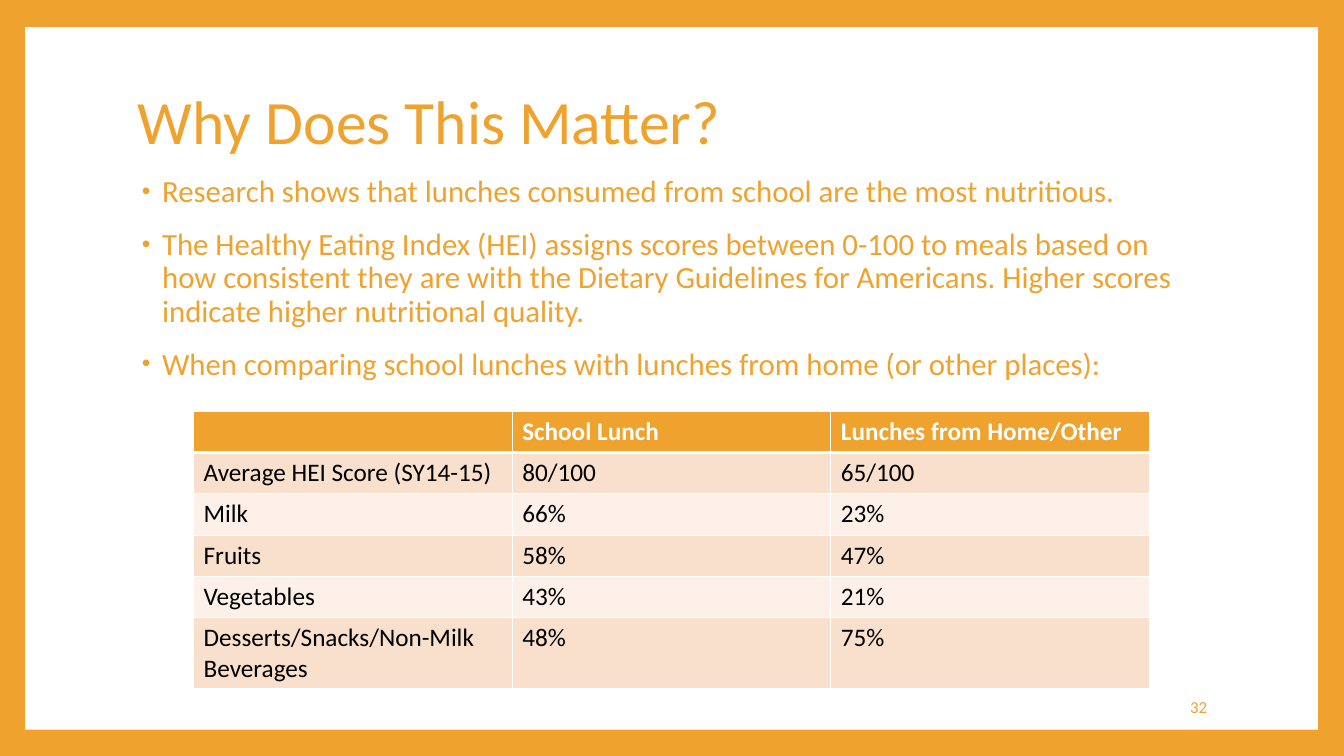
from dataclasses import dataclass

from lxml import etree
from pptx import Presentation
from pptx.dml.color import RGBColor
from pptx.enum.shapes import MSO_SHAPE
from pptx.enum.text import MSO_ANCHOR, PP_ALIGN
from pptx.oxml.ns import qn
from pptx.util import Inches, Pt

RECT = MSO_SHAPE.RECTANGLE
TOP, MIDDLE = MSO_ANCHOR.TOP, MSO_ANCHOR.MIDDLE
LEFT, RIGHT = PP_ALIGN.LEFT, PP_ALIGN.RIGHT


@dataclass(frozen=True)
class Theme:
    font: str = "Calibri"
    accent: str = "F0A22E"
    paper: str = "FFFFFF"
    ink: str = "000000"
    bands: tuple = ("F9E0CD", "FCF0E8")
    title: int = 44
    body: int = 22
    table: int = 18
    number: int = 12


THEME = Theme()

BULLETS = [
    "Research shows that lunches consumed from school are the most nutritious.",
    "The Healthy Eating Index (HEI) assigns scores between 0-100 to meals based on "
    "how consistent they are with the Dietary Guidelines for Americans. "
    "Higher scores indicate higher nutritional quality.",
    "When comparing school lunches with lunches from home (or other places):",
]
SCORES = [
    ("", "School Lunch", "Lunches from Home/Other"),
    ("Average HEI Score (SY14-15)", "80/100", "65/100"),
    ("Milk", "66%", "23%"),
    ("Fruits", "58%", "47%"),
    ("Vegetables", "43%", "21%"),
    ("Desserts/Snacks/Non-Milk Beverages", "48%", "75%"),
]


def paint(fill, color):
    fill.solid()
    fill.fore_color.rgb = RGBColor.from_string(color)


def write(p, text, size, color=THEME.accent, bold=False, align=LEFT,
          line_spacing=None, space_before=0):
    p.alignment = align
    p.line_spacing = line_spacing
    p.space_before = Pt(space_before)
    r = p.add_run()
    r.text = text
    r.font.name = THEME.font
    r.font.size = Pt(size)
    r.font.bold = bold
    r.font.color.rgb = RGBColor.from_string(color)


def add_frame(s, box, anchor=TOP):
    """Add a wrapping text box and return its text frame."""
    tf = s.shapes.add_textbox(*map(Inches, box)).text_frame
    tf.word_wrap = True
    tf.vertical_anchor = anchor
    return tf


def add_bullet(p, indent=0.25, hang=0.2):
    pPr = p._p.get_or_add_pPr()
    pPr.set("marL", str(Inches(indent)))
    pPr.set("indent", str(-Inches(hang)))
    color = etree.SubElement(pPr, qn("a:buClr"))
    etree.SubElement(color, qn("a:srgbClr"), val=THEME.accent)
    etree.SubElement(pPr, qn("a:buSzPct"), val="80000")
    etree.SubElement(pPr, qn("a:buFont"), typeface="Arial")
    etree.SubElement(pPr, qn("a:buChar"), char="•")


def add_borders(cell, **widths):
    """Draw white cell borders; widths are points keyed L, R, T, B."""
    tcPr = cell._tc.get_or_add_tcPr()
    for side, width in widths.items():
        ln = etree.SubElement(tcPr, qn(f"a:ln{side}"), w=str(Pt(width)))
        fill = etree.SubElement(ln, qn("a:solidFill"))
        etree.SubElement(fill, qn("a:srgbClr"), val=THEME.paper)


def add_background(s, box):
    paint(s.background.fill, THEME.accent)
    sp = s.shapes.add_shape(RECT, *map(Inches, box))
    sp.shadow.inherit = False
    paint(sp.fill, THEME.paper)
    sp.line.fill.background()


def add_title(s, box, text):
    tf = add_frame(s, box, MIDDLE)
    write(tf.paragraphs[0], text, THEME.title, line_spacing=0.9)


def add_bullets(s, box, items):
    tf = add_frame(s, box)
    for i, item in enumerate(items):
        p = tf.add_paragraph() if i else tf.paragraphs[0]
        write(p, item, THEME.body, line_spacing=0.9, space_before=14)
        add_bullet(p)


def add_score_table(s, box, rows):
    table = s.shapes.add_table(len(rows), len(rows[0]), *map(Inches, box)).table
    table.horz_banding = False
    for i, row in enumerate(rows):
        header = i == 0
        fill = THEME.accent if header else THEME.bands[(i - 1) % 2]
        color = THEME.paper if header else THEME.ink
        for j, text in enumerate(row):
            cell = table.cell(i, j)
            add_borders(cell, L=1, R=1, T=3 if i == 1 else 1, B=3 if header else 1)
            paint(cell.fill, fill)
            if text:
                write(cell.text_frame.paragraphs[0], text, THEME.table,
                      color=color, bold=header)


def add_slide_number(s, box, number):
    tf = add_frame(s, box)
    tf.vertical_anchor = MIDDLE
    write(tf.paragraphs[0], number, THEME.number, align=RIGHT)


def main():
    prs = Presentation()
    prs.slide_width, prs.slide_height = Inches(13.33), Inches(7.5)
    s = prs.slides.add_slide(prs.slide_layouts[6])
    add_background(s, (0.25, 0.27, 12.82, 6.97))
    add_title(s, (1.27, 0.5, 10.8, 1.48), "Why Does This Matter?")
    add_bullets(s, (1.26, 1.7, 10.8, 4.53), BULLETS)
    add_slide_number(s, (10.2, 6.81, 1.87, 0.4), "32")
    add_score_table(s, (1.92, 4.08, 9.48, 0.41 * len(SCORES)), SCORES)
    prs.save("out.pptx")


if __name__ == "__main__":
    main()
